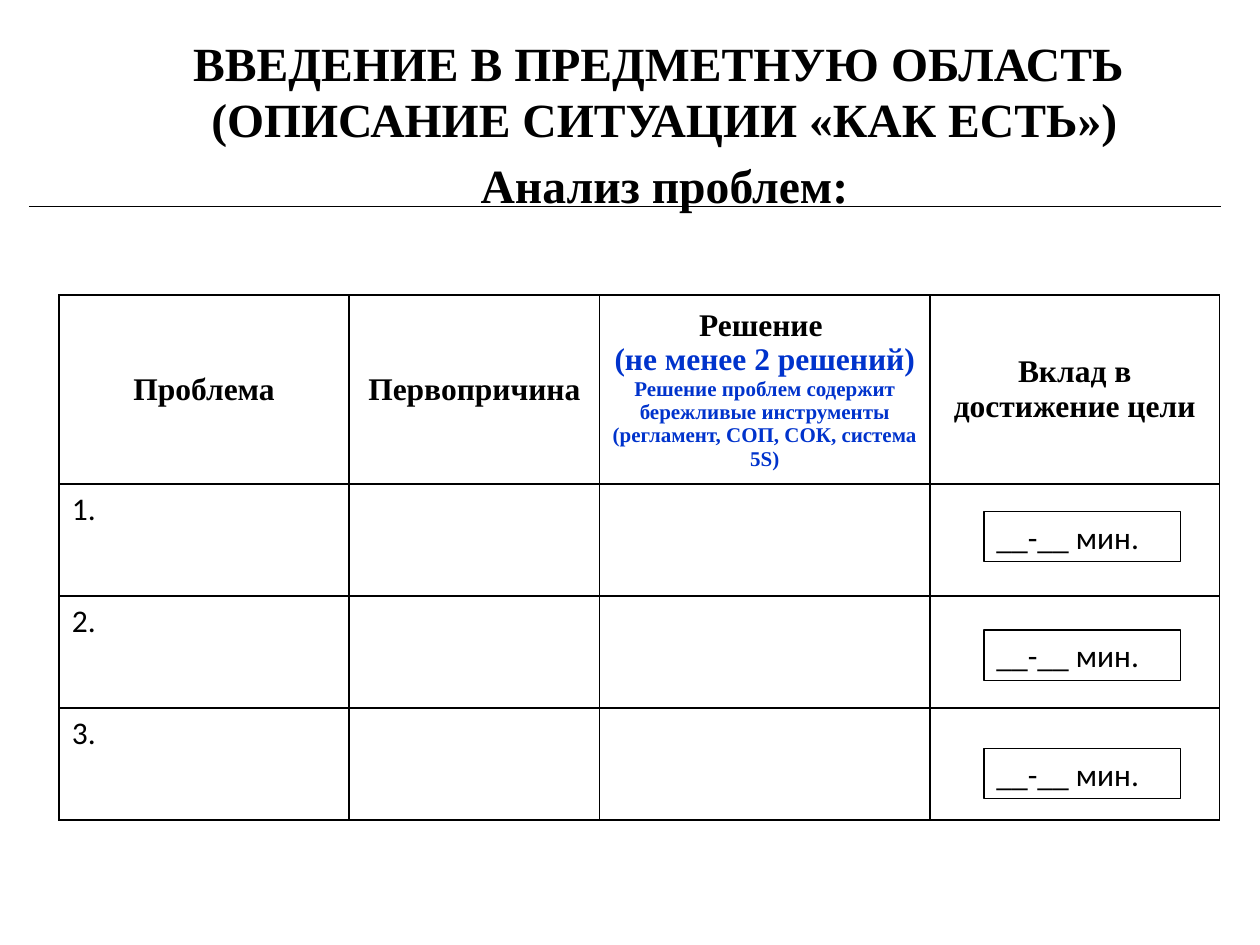
from lxml import etree
from pptx import Presentation
from pptx.dml.color import RGBColor
from pptx.enum import shapes, text
from pptx.oxml import ns
from pptx.util import Inches, Pt

THEME = {
    "black": RGBColor(0, 0, 0),
    "blue": RGBColor(0x00, 0x33, 0xCC),
    "serif": "Times New Roman",
    "sans": "Calibri",
    "title": 27.2,
    "body": 18,
    "note": 12,
    "rule": 0.75,
    "border": 1,
}

TITLE = [
    ("ВВЕДЕНИЕ В ПРЕДМЕТНУЮ ОБЛАСТЬ ", 0.8),
    ("(ОПИСАНИЕ СИТУАЦИИ «КАК ЕСТЬ»)", 0.8),
    ("Анализ проблем:", 1.0),
]
HEADERS = [
    [("Проблема", "body", "black")],
    [("Первопричина", "body", "black")],
    [
        ("Решение ", "body", "black"),
        ("(не менее 2 решений)", "body", "blue"),
        ("Решение проблем содержит бережливые инструменты "
         "(регламент, СОП, СОК, система 5S)", "note", "blue"),
    ],
    [("Вклад в достижение цели", "body", "black")],
]
PROBLEMS = ["1.", "2.", "3."]
CONTRIBUTION = "__-__ мин."

COLUMN_WIDTHS = [2.3, 1.99, 2.62, 2.3]
ROW_HEIGHTS = [1.4] + [0.89] * len(PROBLEMS)
CONTRIBUTION_TOP, CONTRIBUTION_STEP = 4.06, 0.94


def style(paragraph, size, color="black", face="serif", bold=False, align=None):
    font = paragraph.font
    font.name, font.size, font.bold = THEME[face], Pt(THEME[size]), bold
    font.color.rgb = THEME[color]
    paragraph.alignment = align


def paragraphs(frame, count):
    for _ in range(count - 1):
        frame.add_paragraph()
    return frame.paragraphs


def draw_borders(cell):
    properties = cell._tc.get_or_add_tcPr()
    for position, side in enumerate(("lnL", "lnR", "lnT", "lnB")):
        border = etree.Element(ns.qn(f"a:{side}"), w=str(Pt(THEME["border"])))
        fill = etree.SubElement(border, ns.qn("a:solidFill"))
        etree.SubElement(fill, ns.qn("a:srgbClr"), val=str(THEME["black"]))
        properties.insert(position, border)


def add_title(slide):
    frame = slide.shapes.add_textbox(
        Inches(1.25), Inches(0.31), Inches(8.05), Inches(1.48)).text_frame
    frame.word_wrap = True
    for paragraph, (line, spacing) in zip(paragraphs(frame, len(TITLE)), TITLE):
        paragraph.text = line
        paragraph.line_spacing = spacing
        paragraph.space_before = Pt(THEME["title"] * 0.2)
        style(paragraph, "title", bold=True, align=text.PP_ALIGN.CENTER)


def add_rule(slide):
    rule = slide.shapes.add_connector(
        shapes.MSO_CONNECTOR.STRAIGHT,
        Inches(0.23), Inches(1.64), Inches(9.69), Inches(1.64))
    rule.line.color.rgb = THEME["black"]
    rule.line.width = Pt(THEME["rule"])
    etree.SubElement(rule._element.spPr, ns.qn("a:effectLst"))


def add_problem_table(slide):
    table = slide.shapes.add_table(
        len(ROW_HEIGHTS), len(COLUMN_WIDTHS), Inches(0.47), Inches(2.34),
        Inches(sum(COLUMN_WIDTHS)), Inches(sum(ROW_HEIGHTS))).table
    table.first_row = table.horz_banding = False
    for column, width in zip(table.columns, COLUMN_WIDTHS):
        column.width = Inches(width)
    for row, height in zip(table.rows, ROW_HEIGHTS):
        row.height = Inches(height)
    for cell in table.iter_cells():
        cell.fill.background()
        draw_borders(cell)
    for column, lines in enumerate(HEADERS):
        cell = table.cell(0, column)
        cell.vertical_anchor = text.MSO_ANCHOR.MIDDLE
        for paragraph, (line, size, color) in zip(
                paragraphs(cell.text_frame, len(lines)), lines):
            paragraph.text = line
            style(paragraph, size, color, bold=True, align=text.PP_ALIGN.CENTER)
    for row, problem in enumerate(PROBLEMS, start=1):
        paragraph = table.cell(row, 0).text_frame.paragraphs[0]
        paragraph.text = problem
        style(paragraph, "body", face="sans")


def add_contribution(slide, top):
    box = slide.shapes.add_shape(
        shapes.MSO_SHAPE.RECTANGLE,
        Inches(7.81), Inches(top), Inches(1.56), Inches(0.4))
    box.shadow.inherit = False
    box.fill.background()
    box.line.color.rgb = THEME["black"]
    box.line.width = Pt(THEME["rule"])
    frame = box.text_frame
    frame.word_wrap = True
    frame.auto_size = text.MSO_AUTO_SIZE.SHAPE_TO_FIT_TEXT
    frame.vertical_anchor = text.MSO_ANCHOR.TOP
    paragraph = frame.paragraphs[0]
    paragraph.text = CONTRIBUTION
    style(paragraph, "body", face="sans", align=text.PP_ALIGN.LEFT)


def main():
    deck = Presentation()
    deck.slide_width, deck.slide_height = Inches(10), Inches(7.5)
    slide = deck.slides.add_slide(deck.slide_layouts[6])
    add_title(slide)
    add_rule(slide)
    add_problem_table(slide)
    for index in range(len(PROBLEMS)):
        add_contribution(slide, CONTRIBUTION_TOP + index * CONTRIBUTION_STEP)
    deck.save("out.pptx")


if __name__ == "__main__":
    main()
